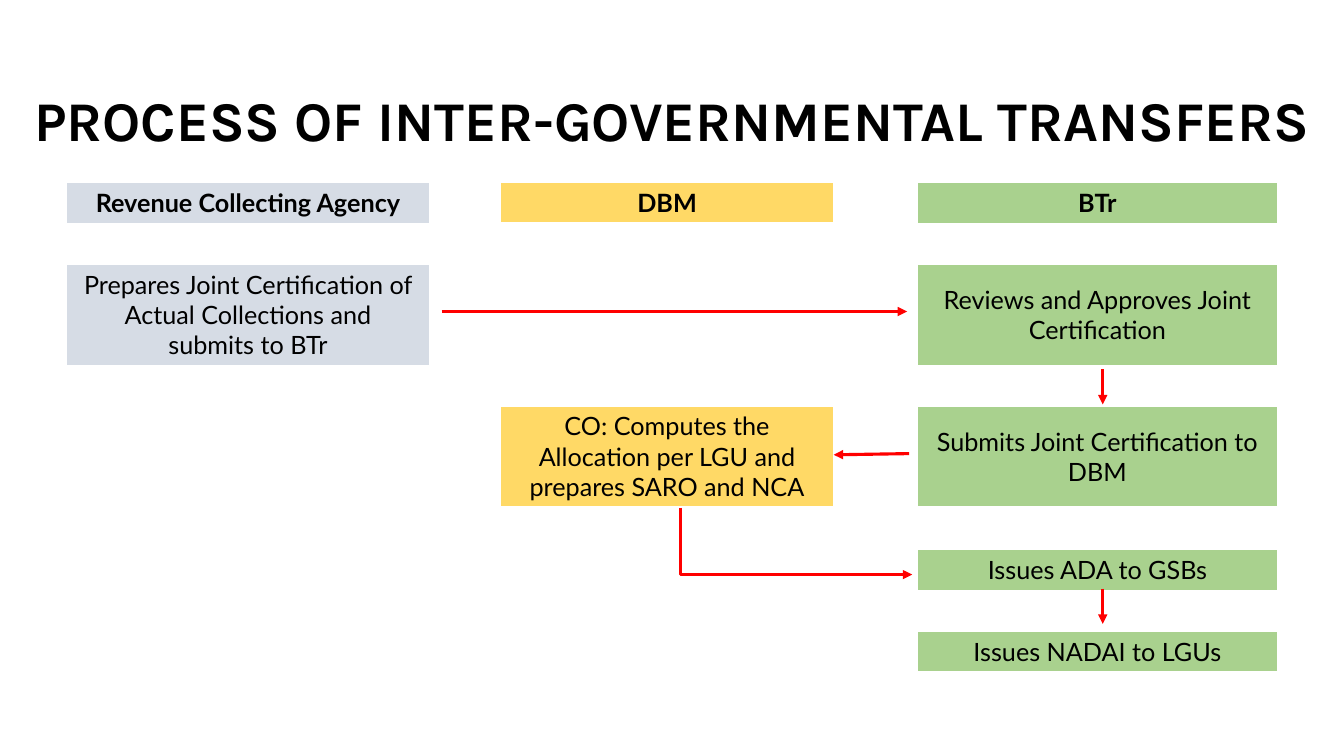
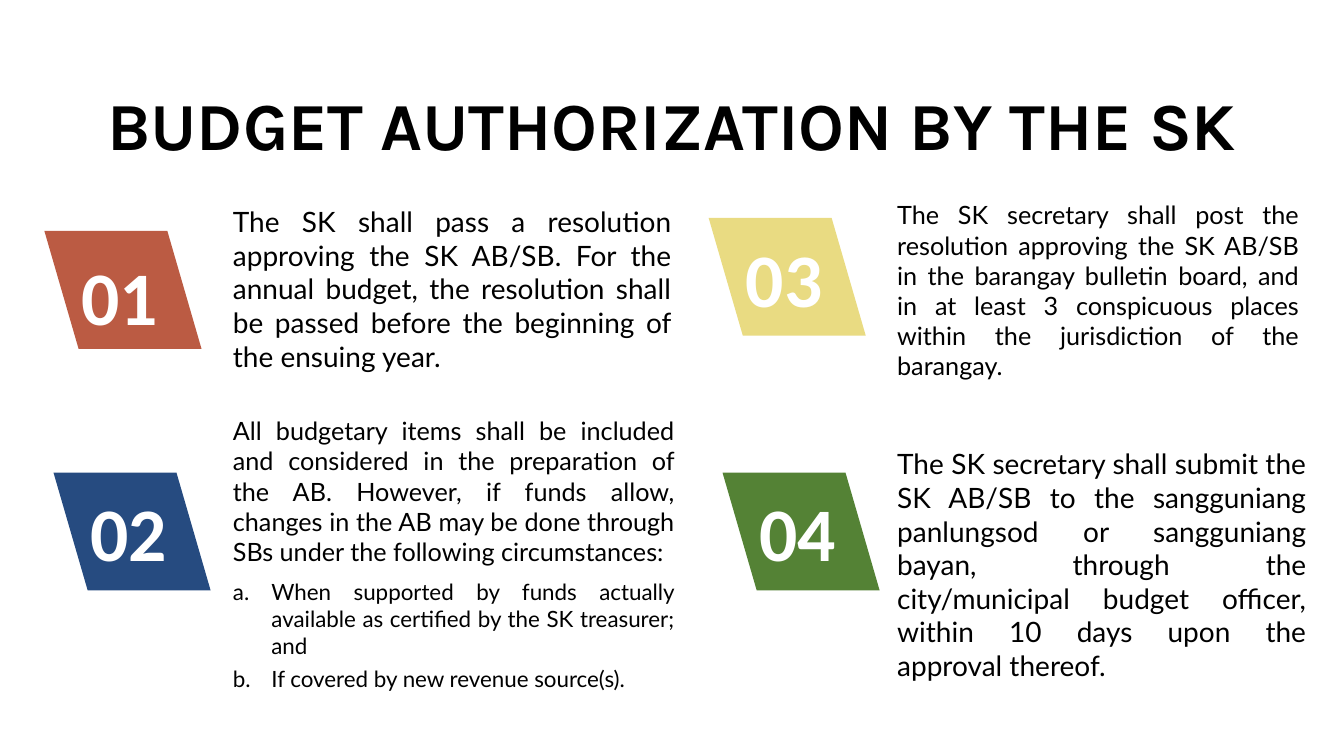
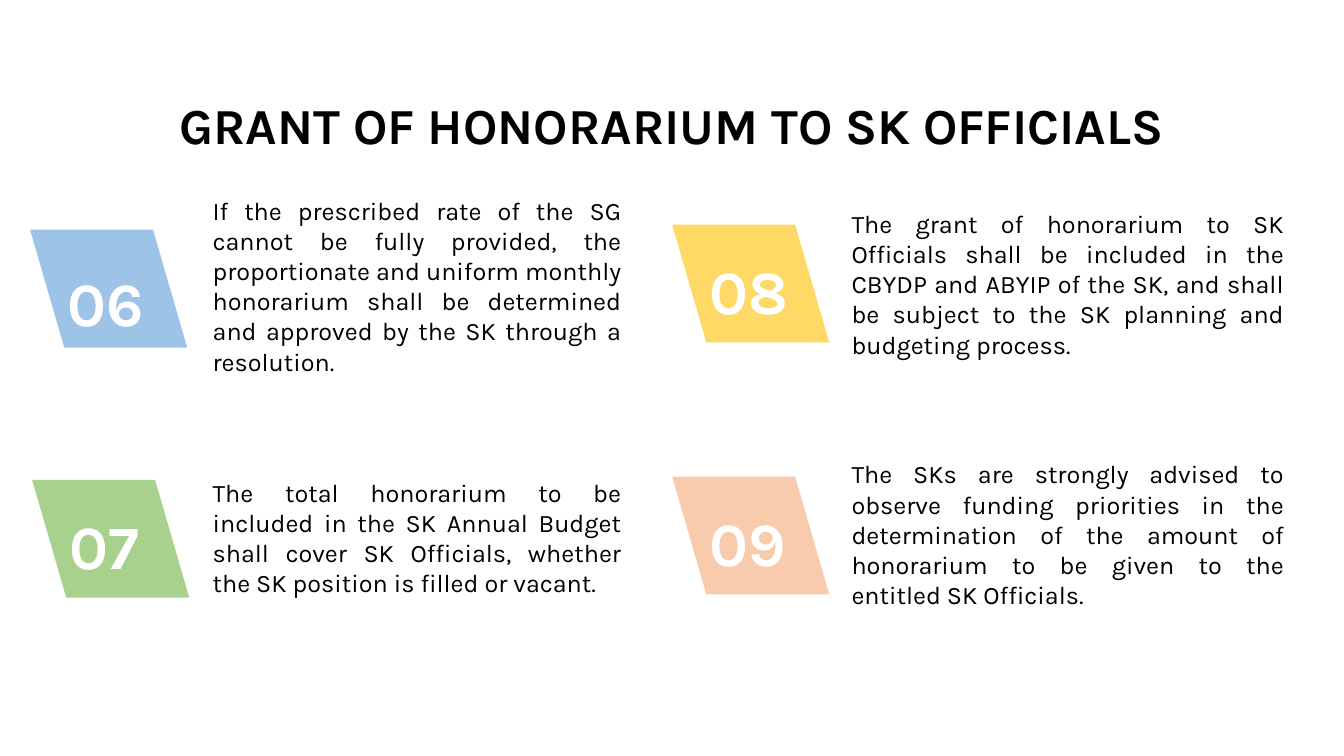
"""Build three slides on budget transfers, authorization and honorarium."""
from lxml import etree
from pptx import Presentation
from pptx.dml.color import RGBColor
from pptx.enum.shapes import MSO_CONNECTOR, MSO_SHAPE
from pptx.enum.text import MSO_ANCHOR, MSO_AUTO_SIZE, PP_ALIGN
from pptx.oxml.ns import qn
from pptx.util import Cm, Pt

CENTER, LEFT, JUSTIFY = PP_ALIGN.CENTER, PP_ALIGN.LEFT, PP_ALIGN.JUSTIFY
TOP, MIDDLE = MSO_ANCHOR.TOP, MSO_ANCHOR.MIDDLE
STRAIGHT, ELBOW = MSO_CONNECTOR.STRAIGHT, MSO_CONNECTOR.ELBOW
NO_FIT = MSO_AUTO_SIZE.NONE
PARALLELOGRAM = MSO_SHAPE.PARALLELOGRAM

COLOURS = {
    "black": "000000", "white": "FFFFFF", "red": "FF0000",
    "grey": "D6DCE5", "gold": "FFD966", "green": "A9D18E",
    "brick": "BB5B43", "navy": "264B80", "straw": "E9DB82",
    "forest": "548235", "sky": "9DC3E6", "peach": "F8CBAD",
}
TITLE_LEFT, TITLE_WIDTH, TITLE_HEIGHT = 0.28, 33.3, 3.45
BADGE_WIDTH, BADGE_HEIGHT, BADGE_SLANT = 3.96, 2.97, 0.29
LIST_INDENT = 0.97
TITLE_ONLY, TITLE_AND_BODY = 5, 1

TRANSFERS = {
    "title": "PROCESS OF INTER-GOVERNMENTAL TRANSFERS",
    "title_size": 40,
    "title_top": 1.28,
    "origin": (1.68, 4.6),
    "columns": [9.14, 1.8, 8.38, 2.11, 9.09],
    "rows": [1.02, 1.02, 2.51, 1.02, 2.51, 1.07, 1.02, 1.02, 1.02],
    "column_colours": {0: "grey", 2: "gold", 4: "green"},
    "cells": {
        (0, 0): "Revenue Collecting Agency",
        (0, 2): "DBM",
        (0, 4): "BTr",
        (2, 0): "Prepares Joint Certification of Actual Collections and submits to BTr",
        (2, 4): "Reviews and Approves Joint Certification",
        (4, 2): "CO: Computes the Allocation per LGU and prepares SARO and NCA",
        (4, 4): "Submits Joint Certification to DBM",
        (6, 4): "Issues ADA to GSBs",
        (8, 4): "Issues NADAI to LGUs",
    },
    "arrows": [
        (STRAIGHT, (11.13, 7.85), (22.86, 7.85)),
        (STRAIGHT, (27.79, 9.3), (27.79, 10.19)),
        (STRAIGHT, (22.91, 11.43), (21.01, 11.46)),
        (ELBOW, (17.15, 12.8), (22.99, 14.48)),
        (STRAIGHT, (27.79, 14.83), (27.79, 15.72)),
    ],
}

NUMBERED_PAGES = [
    {
        "title": "BUDGET AUTHORIZATION BY THE SK",
        "title_size": 48,
        "layout": TITLE_AND_BODY,
        "badge_font": ("Calibri", 54),
        "text_font": "Lato",
        "text_lefts": [5.87, 22.61],
        "text_widths": [11.13, 10.31],
        "items": [
            {"number": "01", "colour": "brick", "badge": (1.12, 5.82), "drop": 0.13,
             "column": 0, "top": 5.03, "height": 3.68, "size": 20, "narrow": 0.08,
             "text": "The SK shall pass a resolution approving the SK AB/SB. For the annual "
                     "budget, the resolution shall be passed before the beginning of the "
                     "ensuing year."},
            {"number": "02", "colour": "navy", "badge": (1.35, 11.91),
             "column": 0, "top": 10.34, "height": 6.81, "size": 18,
             "text": "All budgetary items shall be included and considered in the preparation "
                     "of the AB. However, if funds allow, changes in the AB may be done through "
                     "SBs under the following circumstances:",
             "points": [
                 ("When supported by funds actually available as certified by the SK "
                  "treasurer; and", 8.4),
                 ("If covered by new revenue source(s).", 4),
             ]},
            {"number": "03", "colour": "straw", "badge": (17.86, 5.49),
             "column": 1, "top": 4.9, "height": 4.11, "size": 18, "narrow": 0.18,
             "text": "The SK secretary shall post the resolution approving the SK AB/SB in the "
                     "barangay bulletin board, and in at least 3 conspicuous places within the "
                     "jurisdiction of the barangay."},
            {"number": "04", "colour": "forest", "badge": (18.21, 11.91),
             "column": 1, "top": 11.13, "height": 4.52, "size": 20,
             "text": "The SK secretary shall submit the SK AB/SB to the sangguniang panlungsod "
                     "or sangguniang bayan, through the city/municipal budget officer, within "
                     "10 days upon the approval thereof."},
        ],
    },
    {
        "title": "GRANT OF HONORARIUM TO SK OFFICIALS",
        "title_size": 36,
        "layout": TITLE_ONLY,
        "badge_font": ("Karla", 44),
        "text_font": "Karla",
        "text_lefts": [5.36, 21.46],
        "text_widths": [10.3, 10.9],
        "items": [
            {"number": "06", "colour": "sky", "badge": (0.76, 5.79), "drop": 0.33,
             "column": 0, "top": 4.78, "height": 4.88, "size": 18,
             "text": "If the prescribed rate of the SG cannot be fully provided, the "
                     "proportionate and uniform monthly honorarium shall be determined and "
                     "approved by the SK through a resolution."},
            {"number": "07", "colour": "green", "badge": (0.81, 12.09), "drop": 0.15,
             "column": 0, "top": 11.89, "height": 3.33, "size": 18,
             "text": "The total honorarium to be included in the SK Annual Budget shall cover "
                     "SK Officials, whether the SK position is filled or vacant."},
            {"number": "08", "colour": "gold", "badge": (16.94, 5.66), "drop": 0.15,
             "column": 1, "top": 5.11, "height": 4.11, "size": 18,
             "text": "The grant of honorarium to SK Officials shall be included in the CBYDP "
                     "and ABYIP of the SK, and shall be subject to the SK planning and "
                     "budgeting process."},
            {"number": "09", "colour": "peach", "badge": (16.94, 12.01), "drop": 0.15,
             "column": 1, "top": 11.43, "height": 4.11, "size": 18,
             "text": "The SKs are strongly advised to observe funding priorities in the "
                     "determination of the amount of honorarium to be given to the entitled "
                     "SK Officials."},
        ],
    },
]


def colour(name):
    return RGBColor.from_string(COLOURS[name])


def write(para, text, font, size, ink="black", bold=False, align=CENTER):
    para.alignment = align
    span = para.add_run()
    span.text = text
    span.font.name = font
    span.font.size = Pt(size)
    span.font.bold = bold
    span.font.color.rgb = colour(ink)


def place(shape, left, top, width, height):
    shape.left, shape.top = Cm(left), Cm(top)
    shape.width, shape.height = Cm(width), Cm(height)


def set_frame(frame, anchor, side, top, bottom):
    frame.word_wrap = True
    frame.auto_size = NO_FIT
    frame.vertical_anchor = anchor
    frame.margin_left = frame.margin_right = Cm(side)
    frame.margin_top, frame.margin_bottom = Cm(top), Cm(bottom)


def add_page(deck, layout, title, size, top=1.4):
    page = deck.slides.add_slide(deck.slide_layouts[layout])
    box = page.shapes.title
    place(box, TITLE_LEFT, top, TITLE_WIDTH, TITLE_HEIGHT)
    set_frame(box.text_frame, MIDDLE, 0.18, 0.1, 0.1)
    write(box.text_frame.paragraphs[0], title, "Karla", size, bold=True)
    return page


def add_arrow(page, kind, start, end):
    arrow = page.shapes.add_connector(kind, *map(Cm, start + end))
    arrow.line.color.rgb = colour("red")
    arrow.line.width = Pt(2.25)
    line = arrow.line._get_or_add_ln()
    etree.SubElement(line, qn("a:tailEnd"), type="triangle")
    properties = arrow.element.spPr
    etree.SubElement(properties, qn("a:effectLst"))
    if kind == ELBOW:
        guides = properties.find(qn("a:prstGeom")).find(qn("a:avLst"))
        etree.SubElement(guides, qn("a:gd"), name="adj1", fmla="val 0")


def add_bottom_border(cell, ink, width):
    border = etree.Element(qn("a:lnB"), w=str(Pt(width)))
    fill = etree.SubElement(border, qn("a:solidFill"))
    etree.SubElement(fill, qn("a:srgbClr"), val=COLOURS[ink])
    cell._tc.get_or_add_tcPr().insert(0, border)


def add_flow_table(page, flow):
    columns, rows = flow["columns"], flow["rows"]
    size = (sum(columns), sum(rows))
    frame = page.shapes.add_table(len(rows), len(columns), *map(Cm, flow["origin"] + size))
    table = frame.table
    table.first_row = table.horz_banding = False
    for column, width in zip(table.columns, columns):
        column.width = Cm(width)
    for row, height in zip(table.rows, rows):
        row.height = Cm(height)
    for cell in table.iter_cells():
        cell.fill.background()
    for (row, column), text in flow["cells"].items():
        cell = table.cell(row, column)
        cell.fill.solid()
        cell.fill.fore_color.rgb = colour(flow["column_colours"][column])
        cell.vertical_anchor = MIDDLE
        cell.margin_left = cell.margin_right = Cm(0.33)
        write(cell.text_frame.paragraphs[0], text, "Lato", 18, bold=row == 0)
    add_bottom_border(table.cell(0, 2), "white", 3)


def add_badge(page, item, font, size):
    left, top = item["badge"]
    badge = page.shapes.add_shape(PARALLELOGRAM, Cm(left), Cm(top),
                                  Cm(BADGE_WIDTH), Cm(BADGE_HEIGHT))
    badge.adjustments[0] = BADGE_SLANT
    badge.element.spPr.xfrm.set("flipH", "1")
    badge.shadow.inherit = False
    badge.fill.solid()
    badge.fill.fore_color.rgb = colour(item["colour"])
    badge.line.fill.background()
    set_frame(badge.text_frame, MIDDLE, 0.25, 2 * item.get("drop", 0), 0)
    write(badge.text_frame.paragraphs[0], item["number"], font, size, "white", True, LEFT)


def format_indent(para, indent, bullet, **attributes):
    properties = para._p.get_or_add_pPr()
    properties.set("marL", str(Cm(indent)))
    properties.set("indent", str(-Cm(indent)))
    etree.SubElement(properties, qn(bullet), **attributes)


def add_item_text(page, item, content):
    points = item.get("points", [])
    box = page.placeholders[1] if points else page.shapes.add_textbox(0, 0, 0, 0)
    column = item["column"]
    width = content["text_widths"][column] - item.get("narrow", 0)
    place(box, content["text_lefts"][column], item["top"], width, item["height"])
    frame = box.text_frame
    set_frame(frame, TOP, 0, 0.13, 0.13)
    para = frame.paragraphs[0]
    format_indent(para, 0, "a:buNone")
    para.space_before = Pt(0)
    write(para, item["text"], content["text_font"], item["size"], align=JUSTIFY)
    for text, gap in points:
        para = frame.add_paragraph()
        format_indent(para, LIST_INDENT, "a:buAutoNum", type="alphaLcPeriod")
        para.space_before = Pt(gap)
        write(para, text, content["text_font"], 16, align=JUSTIFY)


def main():
    deck = Presentation()
    deck.slide_width, deck.slide_height = Cm(33.87), Cm(19.05)

    page = add_page(deck, TITLE_ONLY, TRANSFERS["title"], TRANSFERS["title_size"],
                    TRANSFERS["title_top"])
    add_flow_table(page, TRANSFERS)
    for kind, start, end in TRANSFERS["arrows"]:
        add_arrow(page, kind, start, end)

    for content in NUMBERED_PAGES:
        page = add_page(deck, content["layout"], content["title"], content["title_size"])
        for item in content["items"]:
            add_badge(page, item, *content["badge_font"])
            add_item_text(page, item, content)

    deck.save("out.pptx")


if __name__ == "__main__":
    main()
